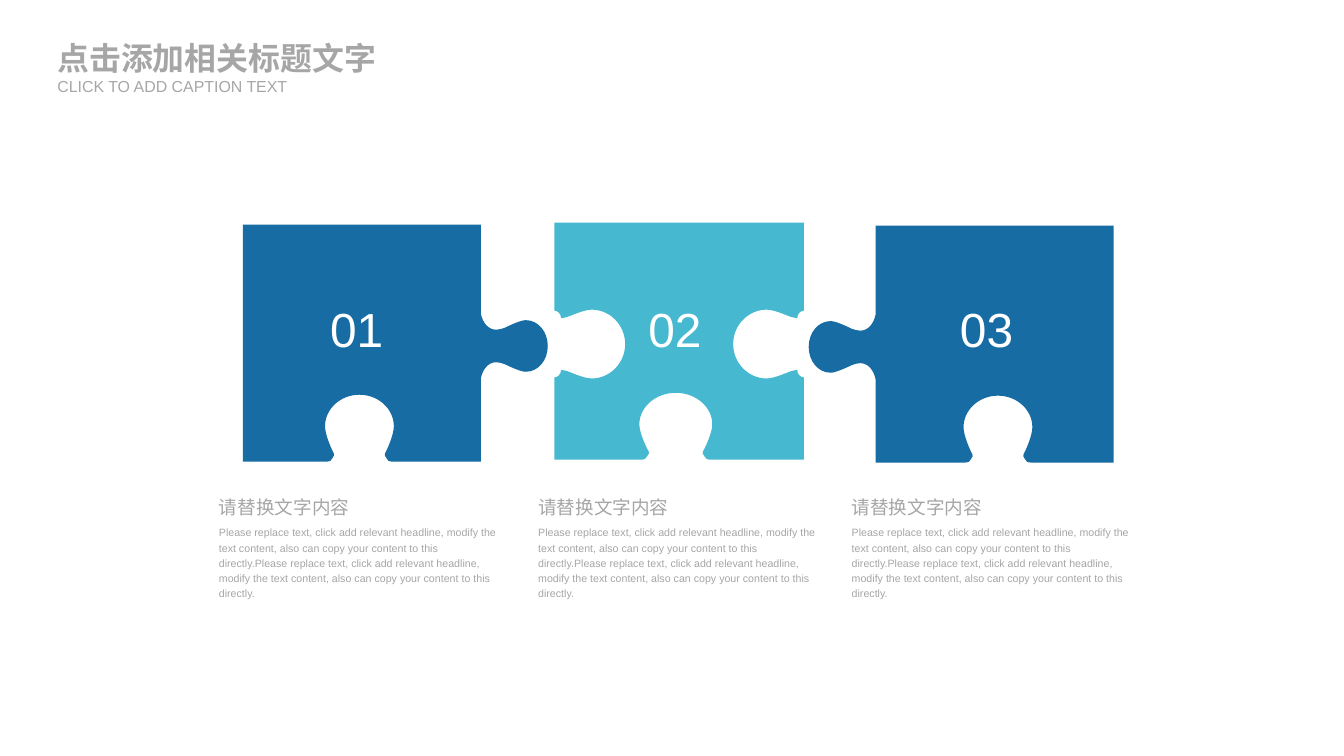
"""Build a slide with three interlocking puzzle pieces and their captions."""
import lxml.etree
import pptx
import pptx.dml.color
import pptx.enum.text
import pptx.oxml.ns
import pptx.util

Inches = pptx.util.Inches
Pt = pptx.util.Pt
RGB = pptx.dml.color.RGBColor
ALIGN = pptx.enum.text.PP_ALIGN
qn = pptx.oxml.ns.qn

THEME = {
    "font": "Arial",
    "blue": RGB.from_string("166CA3"),
    "teal": RGB.from_string("46B9D0"),
    "title": {"size": Pt(24), "bold": True, "color": RGB.from_string("A6A6A6")},
    "subtitle": {"size": Pt(12), "color": RGB.from_string("A6A6A6")},
    "heading": {"size": Pt(14), "color": RGB.from_string("A6A6A6")},
    "body": {"size": Pt(8), "color": RGB.from_string("A6A6A6")},
    "number": {"size": Pt(36), "color": RGB.from_string("FFFFFF")},
}
FLUSH = {
    "margin_left": 0, "margin_top": 0, "margin_right": 0, "margin_bottom": 0,
    "word_wrap": True,
    "vertical_anchor": pptx.enum.text.MSO_ANCHOR.TOP,
    "auto_size": pptx.enum.text.MSO_AUTO_SIZE.SHAPE_TO_FIT_TEXT,
}
FLOATING = {
    "word_wrap": False,
    "auto_size": pptx.enum.text.MSO_AUTO_SIZE.SHAPE_TO_FIT_TEXT,
}

SOCKET = [(-.35, 0), (-.31, 0), (-.29, .01), (-.28, .04),
          (-.26, .05), (-.26, .08), (-.28, .11),
          (-.29, .13), (-.36, .28), (-.36, .37),
          (-.36, .55), (-.2, .7), (0, .7)]
SIDE_SOCKET = [(-.35, 0), (-.35, .03), (-.32, .07), (-.27, .07),
               (-.27, .09), (-.27, .1), (-.28, .12),
               (-.28, .14), (-.36, .3), (-.36, .39),
               (-.36, .58), (-.2, .74), (0, .74)]
TAB = [(-.34, 0), (-.24, .02), (-.17, .08), (-.17, .16),
       (-.17, .19), (-.18, .22), (-.19, .25),
       (-.22, .31), (-.27, .42), (-.27, .47),
       (-.27, .6), (-.15, .7), (0, .7)]
PIECE_HEIGHT = 2.48
JOINT_DROP = 1.27

HEADING = "请替换文字内容"
SENTENCE = ("Please replace text, click add relevant headline, modify the text "
            "content, also can copy your content to this directly.")

PIECES = [
    {"number": "01 ", "number_x": 3.35, "caption_x": 2.29, "color": "blue",
     "left": 2.54, "top": 2.35, "width": 2.49, "notch_x": 3.76,
     "notch_scale": 1, "right_joint": (TAB, 1), "left_joint": None},
    {"number": "02 ", "number_x": 6.68, "caption_x": 5.63, "color": "teal",
     "left": 5.8, "top": 2.33, "width": 2.61, "notch_x": 7.07,
     "notch_scale": 1.06, "right_joint": (SIDE_SOCKET, -1),
     "left_joint": (SIDE_SOCKET, -1)},
    {"number": "03 ", "number_x": 9.94, "caption_x": 8.91, "color": "blue",
     "left": 9.16, "top": 2.36, "width": 2.49, "notch_x": 10.44,
     "notch_scale": 1, "right_joint": None, "left_joint": (TAB, 1)},
]


def joint_points(half):
    """Mirror half a joint; its tripled start makes a straight run to it."""
    return half[:1] * 2 + half + [(-u, v) for u, v in reversed(half[:-1])]


def write_text(sp, text, style, frame, **paragraph):
    """Fill a shape with one formatted paragraph."""
    tf = sp.text_frame
    for name, value in frame.items():
        setattr(tf, name, value)
    p = tf.paragraphs[0]
    for name, value in paragraph.items():
        setattr(p, name, value)
    r = p.add_run()
    r.text = text
    r.font.name = THEME["font"]
    for name, value in THEME[style].items():
        if name == "color":
            r.font.color.rgb = value
        else:
            setattr(r.font, name, value)


prs = pptx.Presentation()
prs.slide_width, prs.slide_height = Inches(14.06), Inches(7.91)
s = prs.slides.add_slide(prs.slide_layouts[5])

title = s.shapes.title
title.left, title.top, title.width, title.height = map(Inches, (0.6, 0.4, 3.52, 0.4))
write_text(title, "点击添加相关标题文字", "title", FLUSH, alignment=ALIGN.LEFT, space_after=Pt(6))
sp = s.shapes.add_textbox(*map(Inches, (0.6, 0.8, 2.89, 0.2)))
write_text(sp, "CLICK TO ADD CAPTION TEXT", "subtitle", FLUSH)

for piece in PIECES:
    left, top = piece["left"], piece["top"]
    right, bottom = left + piece["width"], top + PIECE_HEIGHT
    joint_y = top + JOINT_DROP
    outline = [(right, top)] * 3
    if piece["right_joint"]:
        half, direction = piece["right_joint"]
        outline += [(right + v * direction, joint_y + u) for u, v in joint_points(half)]
    outline += [(right, bottom)] * 3
    outline += [(piece["notch_x"] - u * piece["notch_scale"], bottom - v)
                for u, v in joint_points(SOCKET)]
    outline += [(left, bottom)] * 3
    if piece["left_joint"]:
        half, direction = piece["left_joint"]
        outline += [(left - v * direction, joint_y - u) for u, v in joint_points(half)]

    builder = s.shapes.build_freeform(Inches(left), Inches(top))
    builder.add_line_segments([(Inches(x), Inches(y)) for x, y in outline], close=True)
    sp = builder.convert_to_shape()
    segments = list(sp.element.iter(qn("a:lnTo")))
    for i in range(0, len(outline), 3):
        curve = lxml.etree.Element(qn("a:cubicBezTo"))
        segments[i].addprevious(curve)
        for segment in segments[i:i + 3]:
            curve.append(segment[0])
            segment.getparent().remove(segment)
    sp.shadow.inherit = False
    sp.fill.solid()
    sp.fill.fore_color.rgb = THEME[piece["color"]]
    sp.line.fill.background()

    sp = s.shapes.add_textbox(*map(Inches, (piece["number_x"], 3.09, 0.9, 0.71)))
    write_text(sp, piece["number"], "number", FLOATING, alignment=ALIGN.CENTER)
    sp = s.shapes.add_textbox(*map(Inches, (piece["caption_x"], 5.14, 1.55, 0.26)))
    write_text(sp, HEADING, "heading", FLUSH, line_spacing=1.2)
    sp = s.shapes.add_textbox(*map(Inches, (piece["caption_x"], 5.48, 2.95, 0.81)))
    write_text(sp, SENTENCE * 2, "body", FLUSH, line_spacing=1.2)

prs.save("out.pptx")
